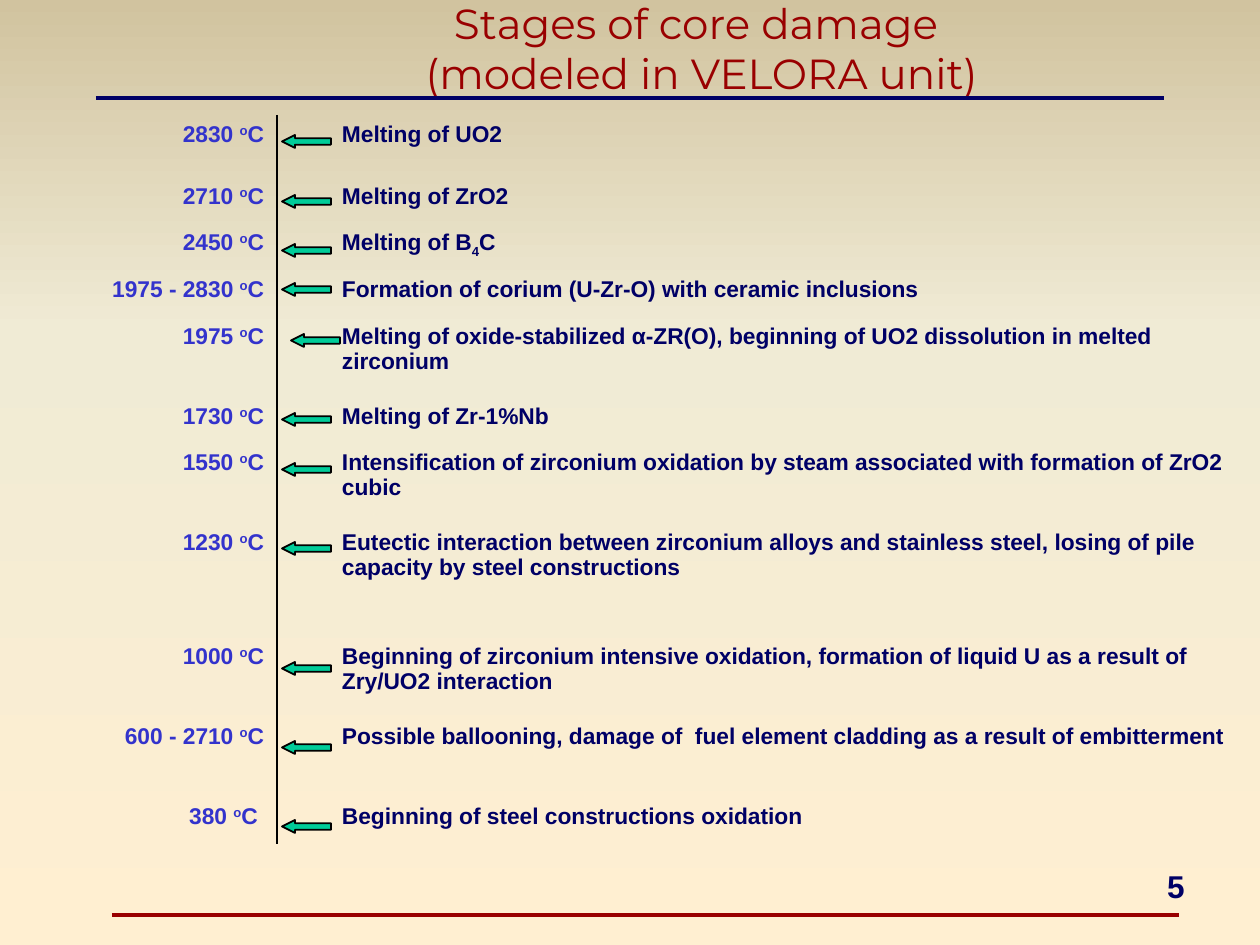
from copy import deepcopy
from dataclasses import dataclass

from lxml import etree
from pptx import Presentation
from pptx.dml.color import RGBColor
from pptx.enum.shapes import MSO_CONNECTOR, MSO_SHAPE
from pptx.enum.text import MSO_ANCHOR, MSO_AUTO_SIZE, PP_ALIGN
from pptx.oxml.ns import qn
from pptx.util import Emu, Pt

LEFT, CENTER, RIGHT = PP_ALIGN.LEFT, PP_ALIGN.CENTER, PP_ALIGN.RIGHT
MIDDLE = MSO_ANCHOR.MIDDLE
NO_AUTOFIT = MSO_AUTO_SIZE.NONE
LEFT_ARROW = MSO_SHAPE.LEFT_ARROW
STRAIGHT = MSO_CONNECTOR.STRAIGHT
TITLE_ONLY = 5
EMU_PER_PX = 914400 / 126
NO_GRID_STYLE = "{2D5ABB26-0587-4C30-8999-92F81FD0307C}"
CELL_SIDES = ("lnL", "lnR", "lnT", "lnB")


@dataclass(frozen=True)
class Theme:
    navy: str = "000066"
    blue: str = "3333CC"
    red: str = "990000"
    green: str = "00CC99"
    black: str = "000000"
    background: tuple = ((0, "D1C39F"), (0.35, "F0EBD5"), (1, "FFEFD1"))
    title_font: str = "Montserrat"
    body_font: str = "Arial"
    title_size: int = 24
    number_size: int = 18
    body_size: int = 13


THEME = Theme()
COLUMN_WIDTHS = (248, 65, 918)
TABLE_LEFT, TABLE_TOP = 29, 115
ARROW_LEFT = 282

STAGES = (
    (62, 135, "2830", (("Melting of UO2", 0),)),
    (46, 195, "2710", (("Melting of ZrO2", 0),)),
    (47, 244, "2450", (("Melting of B", 0), ("4", -25), ("C", 0))),
    (47, 283, "1975 - 2830", (("Formation of corium (U-Zr-O) with ceramic inclusions", 0),)),
    (80, 334, "1975", (("Melting of oxide-stabilized α-ZR(O), beginning of UO2 "
                        "dissolution in melted zirconium", 0),)),
    (46, 413, "1730", (("Melting of Zr-1%Nb", 0),)),
    (80, 463, "1550", (("Intensification of zirconium oxidation by steam associated "
                        "with formation of ZrO2 cubic", 0),)),
    (114, 542, "1230", (("Eutectic interaction between zirconium alloys and stainless "
                         "steel, losing of pile capacity by steel constructions", 0),)),
    (80, 662, "1000", (("Beginning of zirconium intensive oxidation, formation of "
                        "liquid U as a result of  Zry/UO2 interaction", 0),)),
    (80, 741, "600 - 2710", (("Possible ballooning, damage of  fuel element cladding "
                              "as a result of embitterment", 0),)),
    (47, 820, "380", (("Beginning of steel constructions oxidation", 0),)),
)
ARROW_SHIFTS = {"1975": 9}


def px(length):
    return Emu(round(length * EMU_PER_PX))


def box(*lengths):
    return [px(length) for length in lengths]


def rgb(color):
    return RGBColor.from_string(color)


def format_paragraph(paragraph, name, size, color, alignment, bold=False):
    paragraph.alignment = alignment
    font = paragraph.font
    font.name, font.size, font.bold = name, Pt(size), bold
    font.color.rgb = rgb(color)


def paint_background(slide):
    fill = slide.background.fill
    fill.gradient()
    fill.gradient_angle = 270
    stop_list = next(slide.element.iter(qn("a:gsLst")))
    stop_list.append(deepcopy(stop_list[0]))
    for stop, (position, color) in zip(fill.gradient_stops, THEME.background):
        stop.position = position
        stop.color.rgb = rgb(color)


def add_rule(slide, left, right, y, color):
    connector = slide.shapes.add_connector(STRAIGHT, *box(left, y, right, y))
    connector.line.color.rgb = rgb(color)
    connector.line.width = Pt(2.25)
    etree.SubElement(connector.element.spPr, qn("a:effectLst"))


def set_title(slide, text):
    title = slide.shapes.title
    title.left, title.top, title.width, title.height = box(213, -10, 977, 115)
    frame = title.text_frame
    frame.text = text
    frame.auto_size = NO_AUTOFIT
    frame.vertical_anchor = MIDDLE
    format_paragraph(frame.paragraphs[0], THEME.title_font, THEME.title_size,
                     THEME.red, CENTER)


def add_page_number(slide, text):
    frame = slide.shapes.add_textbox(*box(903, 861, 294, 66)).text_frame
    frame.word_wrap = True
    frame.text = text
    format_paragraph(frame.paragraphs[0], THEME.body_font, THEME.number_size,
                     THEME.navy, RIGHT, bold=True)


def write_cell(cell, runs, color, alignment):
    cell.margin_left, cell.margin_right = 0, px(13)
    cell.margin_top, cell.margin_bottom = px(7), px(6)
    paragraph = cell.text_frame.paragraphs[0]
    format_paragraph(paragraph, THEME.body_font, THEME.body_size, color,
                     alignment, bold=True)
    for text, baseline in runs:
        run = paragraph.add_run()
        run.text = text
        if baseline:
            run.font._element.set("baseline", str(baseline * 1000))


def set_borders(cell, visible_side=None):
    properties = cell._tc.get_or_add_tcPr()
    for index, side in enumerate(CELL_SIDES):
        line = etree.Element(qn(f"a:{side}"), w=str(Pt(1)))
        if side == visible_side:
            fill = etree.SubElement(line, qn("a:solidFill"))
            etree.SubElement(fill, qn("a:srgbClr"), val=THEME.black)
        else:
            etree.SubElement(line, qn("a:noFill"))
        properties.insert(index, line)


def add_stage_table(slide):
    frame = slide.shapes.add_table(
        len(STAGES), len(COLUMN_WIDTHS),
        *box(TABLE_LEFT, TABLE_TOP, sum(COLUMN_WIDTHS), sum(stage[0] for stage in STAGES)))
    table = frame.table
    table.first_row = table.horz_banding = False
    next(frame.element.iter(qn("a:tableStyleId"))).text = NO_GRID_STYLE
    for column, width in zip(table.columns, COLUMN_WIDTHS):
        column.width = px(width)
    for row, (height, _, temperature, description) in zip(table.rows, STAGES):
        row.height = px(height)
        degrees, axis, event = row.cells
        unit = "C " if temperature == "380" else "C"
        write_cell(degrees, ((temperature + " ", 0), ("o", 30), (unit, 0)),
                   THEME.blue, RIGHT)
        write_cell(axis, (), THEME.navy, LEFT)
        write_cell(event, description, THEME.navy, LEFT)
        for cell, side in ((degrees, "lnR"), (axis, "lnL"), (event, None)):
            cell.fill.background()
            set_borders(cell, side)


def add_arrow(slide, left, top):
    arrow = slide.shapes.add_shape(LEFT_ARROW, *box(left, top, 49, 13))
    arrow.shadow.inherit = False
    arrow.adjustments[0], arrow.adjustments[1] = 0.5, 1
    arrow.fill.solid()
    arrow.fill.fore_color.rgb = rgb(THEME.green)
    arrow.line.color.rgb = rgb(THEME.black)
    arrow.line.width = Pt(1)


def main():
    presentation = Presentation()
    presentation.slide_width, presentation.slide_height = box(1260, 945)
    slide = presentation.slides.add_slide(presentation.slide_layouts[TITLE_ONLY])
    paint_background(slide)
    add_rule(slide, 96, 1164, 98, THEME.navy)
    add_rule(slide, 112, 1179, 915, THEME.red)
    add_page_number(slide, "5")
    set_title(slide, "Stages of core damage \v(modeled in VELORA unit)")
    add_stage_table(slide)
    for _, top, temperature, _ in STAGES:
        add_arrow(slide, ARROW_LEFT + ARROW_SHIFTS.get(temperature, 0), top)
    presentation.save("out.pptx")


if __name__ == "__main__":
    main()
